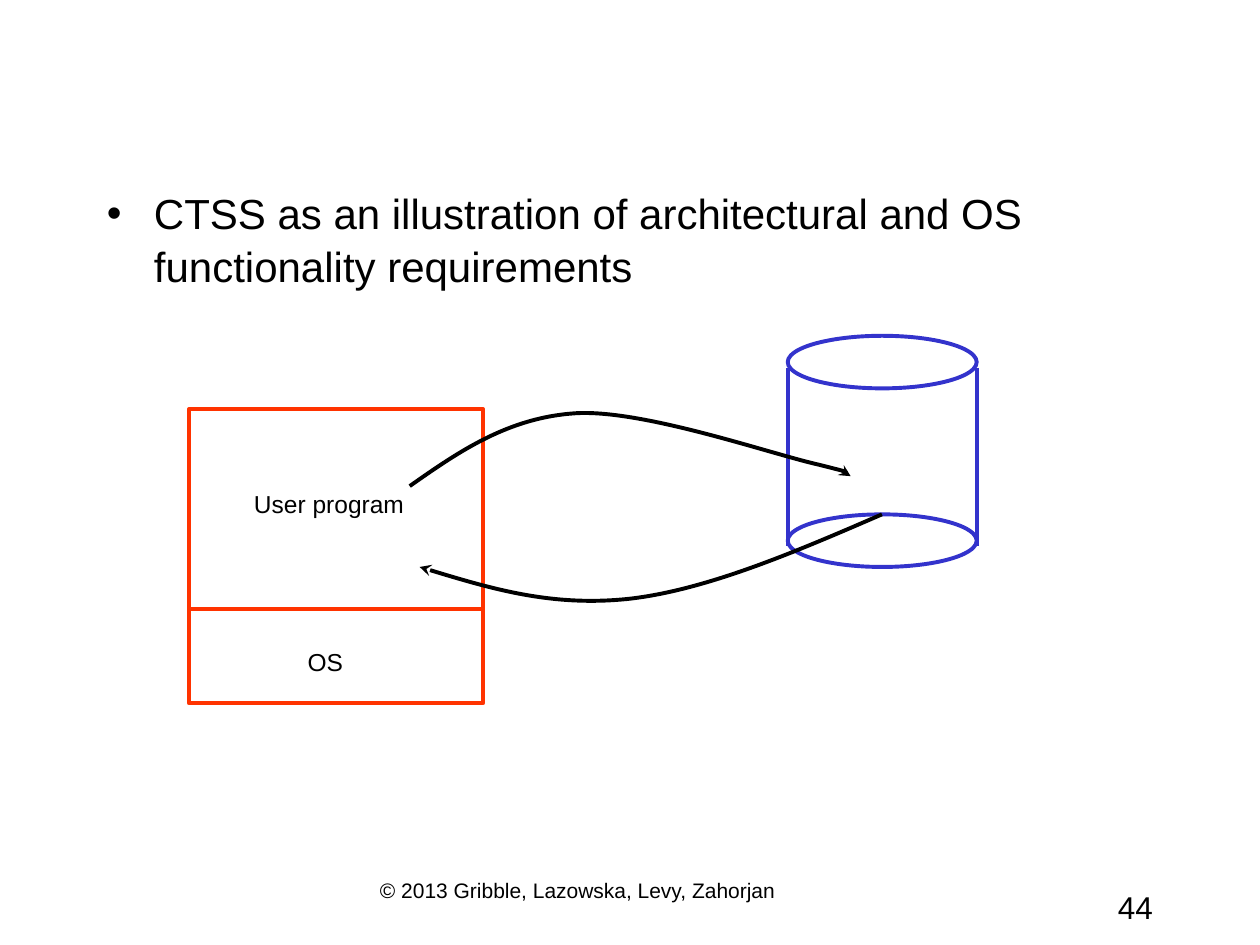
from lxml.etree import SubElement
from pptx import Presentation
from pptx.dml.color import RGBColor as Rgb
from pptx.enum.shapes import MSO_CONNECTOR as Conn, MSO_SHAPE as Kind
from pptx.enum.text import MSO_AUTO_SIZE as Fit, PP_ALIGN as Align
from pptx.oxml.ns import qn
from pptx.util import Cm, Pt

HUES = {"text": "000000", "memory": "FF3300", "disk": "3333CC", "flow": "000000"}
FONT = "Arial"


def style(para, size, align=Align.LEFT):
    para.alignment = align
    para.font.name = FONT
    para.font.size = Pt(size)
    para.font.color.rgb = Rgb.from_string(HUES["text"])


def stroke(shape, hue):
    shape.line.color.rgb = Rgb.from_string(HUES[hue])
    shape.line.width = Pt(2.25)


def place(shape, box):
    shape.left, shape.top, shape.width, shape.height = map(Cm, box)


def add_body(slide, text, box):
    body = slide.placeholders[1]
    place(body, box)
    frame = body.text_frame
    frame.auto_size = Fit.NONE
    frame.text = text
    para = frame.paragraphs[0]
    style(para, 24)
    para.line_spacing = 1.05
    props = para._p.get_or_add_pPr()
    props.set("marL", str(Cm(0.95)))
    props.set("indent", str(-Cm(0.95)))
    SubElement(props, qn("a:buChar"), char="•")


def add_label(slide, text, box, size, align, wrap=True):
    frame = slide.shapes.add_textbox(*map(Cm, box)).text_frame
    frame.word_wrap = wrap
    frame.text = text
    style(frame.paragraphs[0], size, align)


def add_outline(slide, kind, box, hue):
    shape = slide.shapes.add_shape(kind, *map(Cm, box))
    shape.shadow.inherit = False
    shape.fill.background()
    stroke(shape, hue)


def add_line(slide, ends, hue):
    line = slide.shapes.add_connector(Conn.STRAIGHT, *map(Cm, ends))
    SubElement(line._element.spPr, qn("a:effectLst"))
    stroke(line, hue)


def add_disk(slide, left, top, wide, tall):
    lid = 1.06
    for y in (top, top + tall - lid):
        add_outline(slide, Kind.OVAL, (left, y, wide, lid), "disk")
    for x in (left, left + wide):
        add_line(slide, (x, top + 0.64, x, top + tall - 0.42), "disk")


def add_curve(slide, points):
    """Draw an arrow through a start point and triples of Bezier points."""
    start, *rest = [(Cm(x), Cm(y)) for x, y in points]
    pen = slide.shapes.build_freeform(*start)
    pen.add_line_segments(rest, close=False)
    curve = pen.convert_to_shape()
    curve.shadow.inherit = False
    curve.fill.background()
    stroke(curve, "flow")
    track = curve._element.find(".//" + qn("a:path"))
    steps = track.findall(qn("a:lnTo"))
    for i in range(0, len(steps), 3):
        bend = SubElement(track, qn("a:cubicBezTo"))
        for step in steps[i:i + 3]:
            bend.append(step[0])
            track.remove(step)
    SubElement(curve.line._get_or_add_ln(), qn("a:tailEnd"), type="stealth")


def main():
    deck = Presentation()
    deck.slide_width, deck.slide_height = Cm(25.4), Cm(19.05)
    slide = deck.slides.add_slide(deck.slide_layouts[1])
    title = slide.shapes.title._element
    title.getparent().remove(title)

    add_label(slide, "© 2013 Gribble, Lazowska, Levy, Zahorjan",
              (7.41, 17.57, 10.37, 0.43), 12, Align.LEFT)
    add_label(slide, "44", (18.2, 17.78, 5.29, 0.85), 18, Align.RIGHT)
    add_body(slide, "CTSS as an illustration of architectural and OS "
             "functionality requirements", (1.9, 3.6, 21.59, 13.76))

    for top, tall in ((8.25, 4.03), (12.28, 1.9)):
        add_outline(slide, Kind.RECTANGLE, (3.81, top, 5.93, tall), "memory")
    add_label(slide, "OS", (5.5, 12.91, 2.12, 0.85), 14, Align.CENTER)
    add_label(slide, "User program", (4.87, 9.74, 3.53, 0.85), 14,
              Align.CENTER, wrap=False)

    add_disk(slide, 15.88, 6.77, 3.81, 4.66)
    add_curve(slide, [(8.26, 9.8), (9.27, 9.09), (10.26, 8.41), (11.63, 8.33),
                      (13, 8.26), (15.6, 9.17), (16.51, 9.37),
                      (17.42, 9.6), (17.04, 9.55), (17.15, 9.6)])
    add_curve(slide, [(17.78, 10.37), (16.03, 11.13), (14.25, 11.89),
                      (12.7, 12.07), (11.15, 12.24), (9.8, 11.84), (8.46, 11.43)])
    deck.save("out.pptx")


if __name__ == "__main__":
    main()
